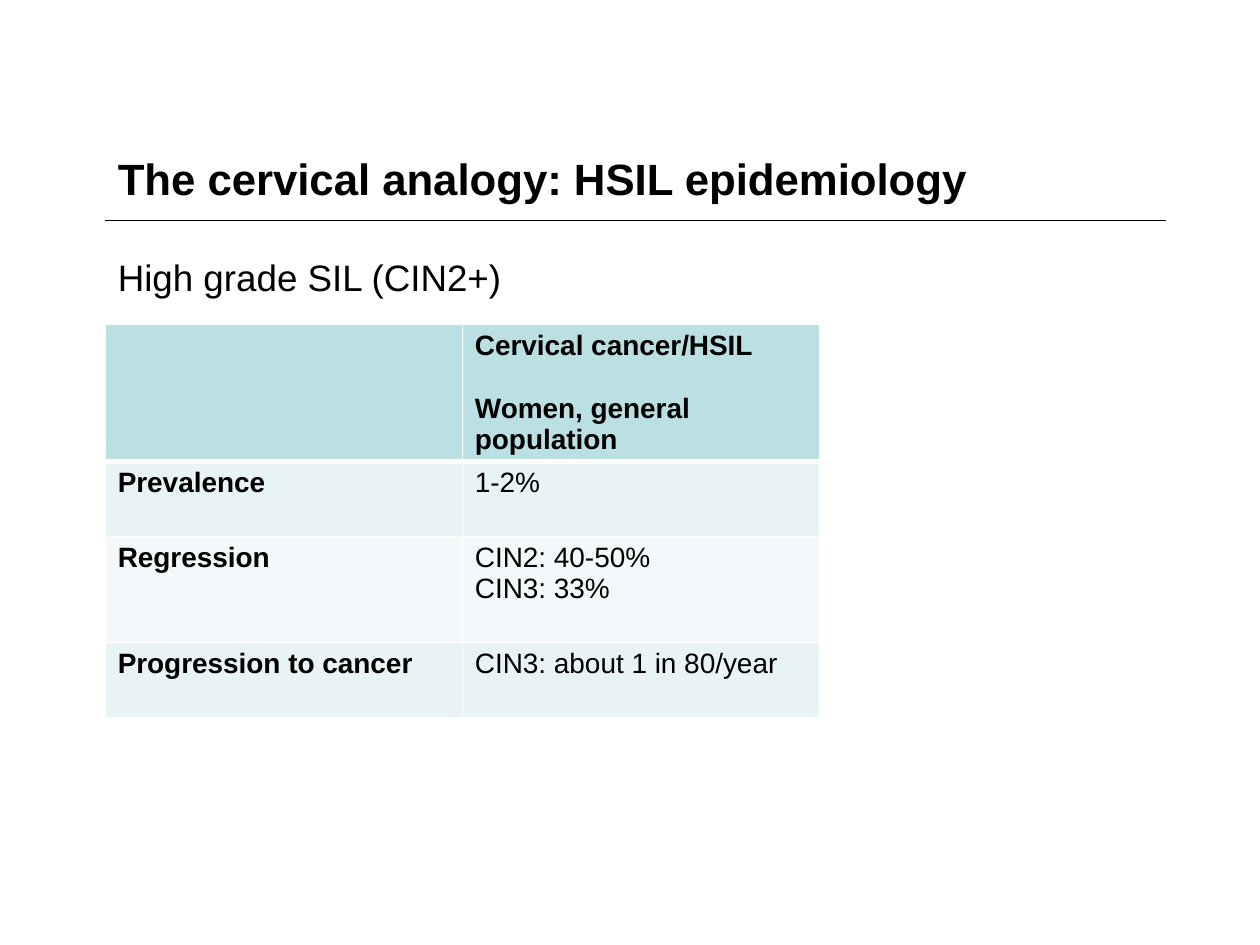
from lxml import etree
from pptx import Presentation
from pptx import util as u
from pptx.dml.color import RGBColor
from pptx.enum import shapes, text
from pptx.oxml.ns import qn


def color(value):
    return RGBColor.from_string(value)


class Deck:
    font = "Arial"
    ink = "000000"
    rule = "FFFFFF"
    header_fill = "BBE0E3"
    band_fills = ("E7F3F4", "F3F9FA")

    def __init__(self, prs):
        self.s = prs.slides.add_slide(prs.slide_layouts[0])

    def format(self, p, size, bold=False):
        p.alignment = text.PP_ALIGN.LEFT
        style = {"name": self.font, "size": u.Pt(size), "bold": bold}
        for key, value in style.items():
            setattr(p.font, key, value)
        p.font.color.rgb = color(self.ink)

    def placeholder(self, index, words, box, size, inset, bold=False):
        sp = self.s.placeholders[index]
        for key, value in zip(("left", "top", "width", "height"), box):
            setattr(sp, key, u.Cm(value))
        tf = sp.text_frame
        tf.text = words
        frame = {"word_wrap": True, "auto_size": text.MSO_AUTO_SIZE.NONE,
                 "vertical_anchor": text.MSO_ANCHOR.TOP,
                 "margin_top": u.Cm(inset)}
        for key, value in frame.items():
            setattr(tf, key, value)
        p = tf.paragraphs[0]
        p.space_before = u.Pt(0)
        self.format(p, size, bold)

    def line(self, x1, x2, y):
        c = self.s.shapes.add_connector(
            shapes.MSO_CONNECTOR.STRAIGHT, u.Cm(x1), u.Cm(y), u.Cm(x2), u.Cm(y))
        c.line.color.rgb = color(self.ink)
        c.line.width = u.Pt(0.75)
        etree.SubElement(c._element.spPr, qn("a:effectLst"))

    def borders(self, cell, widths):
        tcPr = cell._tc.get_or_add_tcPr()
        for i, (side, width) in enumerate(widths.items()):
            ln = etree.Element(qn("a:ln" + side), w=str(u.Pt(width)))
            fill = etree.SubElement(ln, qn("a:solidFill"))
            etree.SubElement(fill, qn("a:srgbClr"), val=self.rule)
            tcPr.insert(i, ln)

    def cell(self, cell, words, row, bold):
        cell.fill.solid()
        fill = self.band_fills[(row - 1) % 2] if row else self.header_fill
        cell.fill.fore_color.rgb = color(fill)
        self.borders(cell, {"L": 1, "R": 1, "T": 3 if row == 1 else 1,
                            "B": 1 if row else 3})
        cell.text = words
        for i, p in enumerate(cell.text_frame.paragraphs):
            self.format(p, 16, bold)
            if i and row == 0:
                p.space_before = u.Pt(18)

    def table(self, rows, left, top, width, heights):
        columns = len(rows[0])
        t = self.s.shapes.add_table(
            len(rows), columns, u.Cm(left), u.Cm(top),
            u.Cm(width), u.Cm(sum(heights))).table
        for column in t.columns:
            column.width = u.Cm(width / columns)
        for i, (words, height) in enumerate(zip(rows, heights)):
            t.rows[i].height = u.Cm(height)
            for j, value in enumerate(words):
                self.cell(t.cell(i, j), value, i, i == 0 or j == 0)


def main():
    prs = Presentation()
    prs.slide_width, prs.slide_height = u.Cm(25.4), u.Cm(19.05)
    left, width = 2.12, 21.59
    deck = Deck(prs)
    deck.line(left, 23.5, 4.44)
    deck.placeholder(0, "The cervical analogy: HSIL epidemiology",
                     (left, 2.82, width, 1.7), 25, 0.23, True)
    deck.placeholder(1, "High grade SIL (CIN2+)",
                     (left, 4.93, width, 1.47), 21, 0.21)
    rows = [
        ("", "Cervical cancer/HSIL\nWomen, general population"),
        ("Prevalence", "1-2%"),
        ("Regression", "CIN2: 40-50%\nCIN3: 33%"),
        ("Progression to cancer", "CIN3: about 1 in 80/year"),
    ]
    deck.table(rows, left, 6.53, 14.4, (2.75, 1.51, 2.14, 1.51))
    prs.save("out.pptx")


if __name__ == "__main__":
    main()
